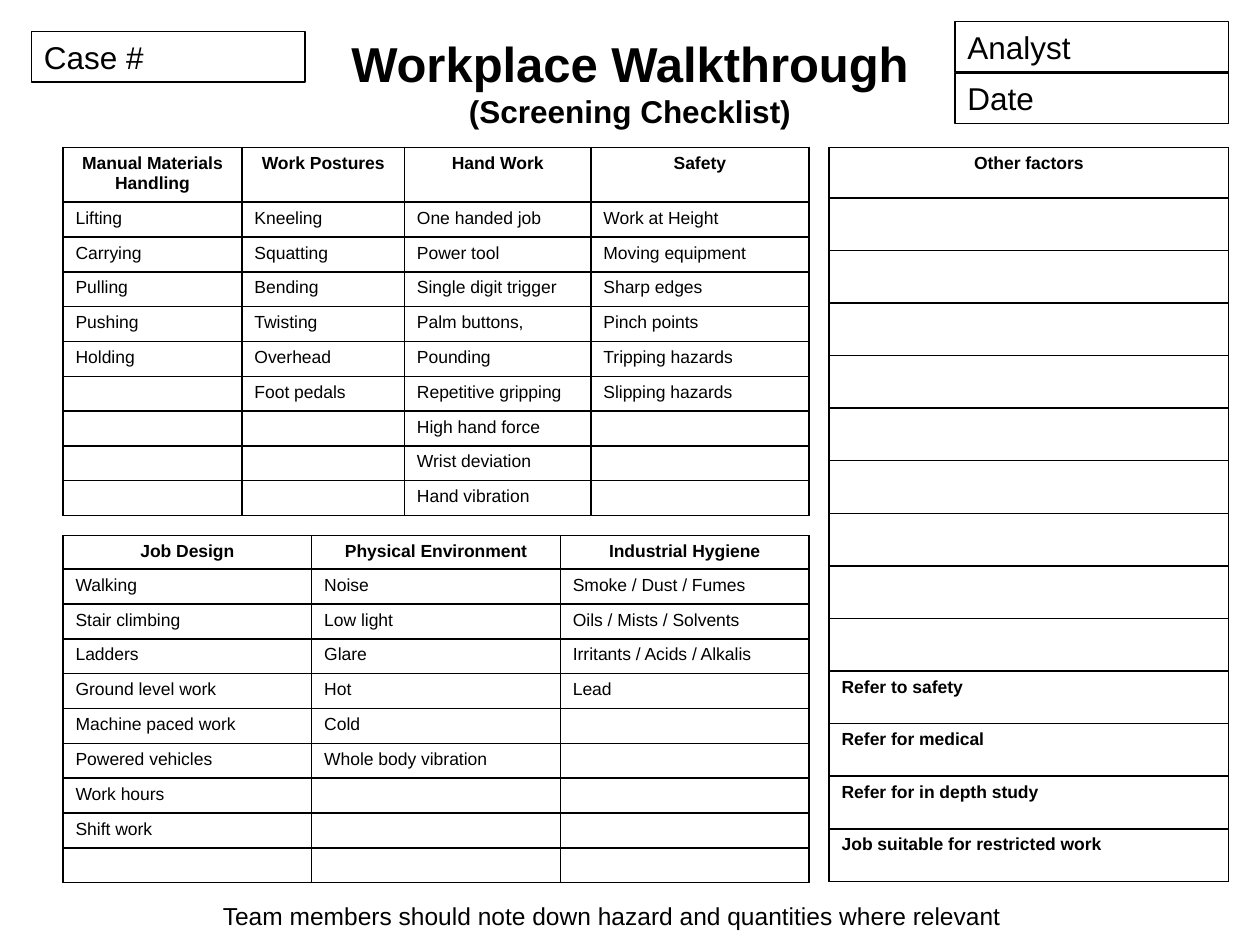
from itertools import zip_longest

from lxml.etree import SubElement
from pptx import Presentation
from pptx.dml.color import RGBColor
from pptx.enum.shapes import MSO_SHAPE
from pptx.enum.text import MSO_ANCHOR, PP_ALIGN
from pptx.oxml.ns import qn
from pptx.util import Inches, Pt

BLACK = RGBColor(0, 0, 0)
FONT = "Arial"

TASKS = {
    "Manual Materials Handling": ["Lifting", "Carrying", "Pulling", "Pushing", "Holding"],
    "Work Postures": ["Kneeling", "Squatting", "Bending", "Twisting", "Overhead",
                      "Foot pedals"],
    "Hand Work": ["One handed job", "Power tool", "Single digit trigger", "Palm buttons,",
                  "Pounding", "Repetitive gripping", "High hand force",
                  "Wrist deviation", "Hand vibration"],
    "Safety": ["Work at Height", "Moving equipment", "Sharp edges", "Pinch points",
               "Tripping hazards", "Slipping hazards"],
}
SITE = {
    "Job Design": ["Walking", "Stair climbing", "Ladders", "Ground level work",
                   "Machine paced work", "Powered vehicles", "Work hours", "Shift work", ""],
    "Physical Environment": ["Noise", "Low light", "Glare", "Hot", "Cold",
                             "Whole body vibration"],
    "Industrial Hygiene": ["Smoke / Dust / Fumes", "Oils / Mists / Solvents",
                           "Irritants / Acids / Alkalis", "Lead"],
}
OTHER = {
    "Other factors": [""] * 9 + ["Refer to safety", "Refer for medical",
                                 "Refer for in depth study",
                                 "Job suitable for restricted work"],
}


def add_run(para, text, size, bold=False):
    """Add one styled run to a paragraph."""
    run = para.add_run()
    run.text = text
    font = run.font
    font.name, font.size, font.bold = FONT, Pt(size), bold
    font.color.rgb = BLACK


def add_text(slide, box):
    """Add a wrapping text box and return its frame."""
    frame = slide.shapes.add_textbox(*map(Inches, box)).text_frame
    frame.word_wrap = True
    return frame


def add_title(slide, box):
    """Place the two-line heading."""
    frame = add_text(slide, box)
    frame.vertical_anchor = MSO_ANCHOR.MIDDLE
    para = frame.paragraphs[0]
    para.alignment = PP_ALIGN.CENTER
    add_run(para, "Workplace Walkthrough", 28, True)
    para.add_line_break()
    add_run(para, "(Screening Checklist)", 18, True)


def add_field(slide, box, label):
    """Place one outlined entry field."""
    shape = slide.shapes.add_shape(MSO_SHAPE.RECTANGLE, *map(Inches, box))
    shape.shadow.inherit = False
    shape.fill.background()
    shape.line.color.rgb = BLACK
    shape.line.width = Pt(1)
    frame = shape.text_frame
    frame.word_wrap = True
    frame.vertical_anchor = MSO_ANCHOR.TOP
    para = frame.paragraphs[0]
    para.alignment = PP_ALIGN.LEFT
    add_run(para, label, 18)


def style_cell(cell):
    """Give a cell thin black borders and no fill."""
    props = cell._tc.get_or_add_tcPr()
    for side in ("a:lnL", "a:lnR", "a:lnT", "a:lnB"):
        line = SubElement(props, qn(side), w=str(Pt(1)))
        fill = SubElement(line, qn("a:solidFill"))
        SubElement(fill, qn("a:srgbClr"), val=str(BLACK))
    cell.fill.background()


def add_list(slide, box, lists, widths, head, bold=False):
    """Place a checklist table with a header row and equal rows below."""
    rows = [list(lists), *zip_longest(*lists.values(), fillvalue="")]
    frame = slide.shapes.add_table(len(rows), len(widths), *map(Inches, box))
    table = frame.table
    table.first_row = table.horz_banding = False
    for col, width in zip(table.columns, widths):
        col.width = Inches(width)
    step = (box[3] - head) / (len(rows) - 1)
    for i, texts in enumerate(rows):
        table.rows[i].height = Inches(step if i else head)
        for j, text in enumerate(texts):
            cell = table.cell(i, j)
            style_cell(cell)
            para = cell.text_frame.paragraphs[0]
            if i == 0:
                para.alignment = PP_ALIGN.CENTER
            if text:
                add_run(para, text, 10, bold or i == 0)
            else:
                SubElement(para._p, qn("a:endParaRPr"), sz="1000")


def add_note(slide, box):
    """Place the closing instruction."""
    para = add_text(slide, box).paragraphs[0]
    add_run(para, "Team members should note down hazard and quantities where relevant", 14)


def main():
    """Build and save the checklist slide."""
    deck = Presentation()
    deck.slide_width, deck.slide_height = Inches(10), Inches(7.5)
    slide = deck.slides.add_slide(deck.slide_layouts[6])
    add_title(slide, (0.5, 0.3, 9, 0.7))
    add_list(slide, (0.5, 1.17, 5.92, 2.9), TASKS, (1.42, 1.29, 1.48, 1.73), 0.41)
    add_list(slide, (0.5, 4.25, 5.92, 2.74), SITE, [5.92 / 3] * 3, 0.25)
    add_list(slide, (6.58, 1.17, 3.17, 5.83), OTHER, [3.17], 0.4, True)
    add_note(slide, (1.67, 7.1, 7.33, 0.34))
    add_field(slide, (0.25, 0.25, 2.17, 0.4), "Case #")
    for row, label in enumerate(("Analyst", "Date")):
        add_field(slide, (7.58, 0.17 + row * 0.41, 2.17, 0.4), label)
    deck.save("out.pptx")


if __name__ == "__main__":
    main()
